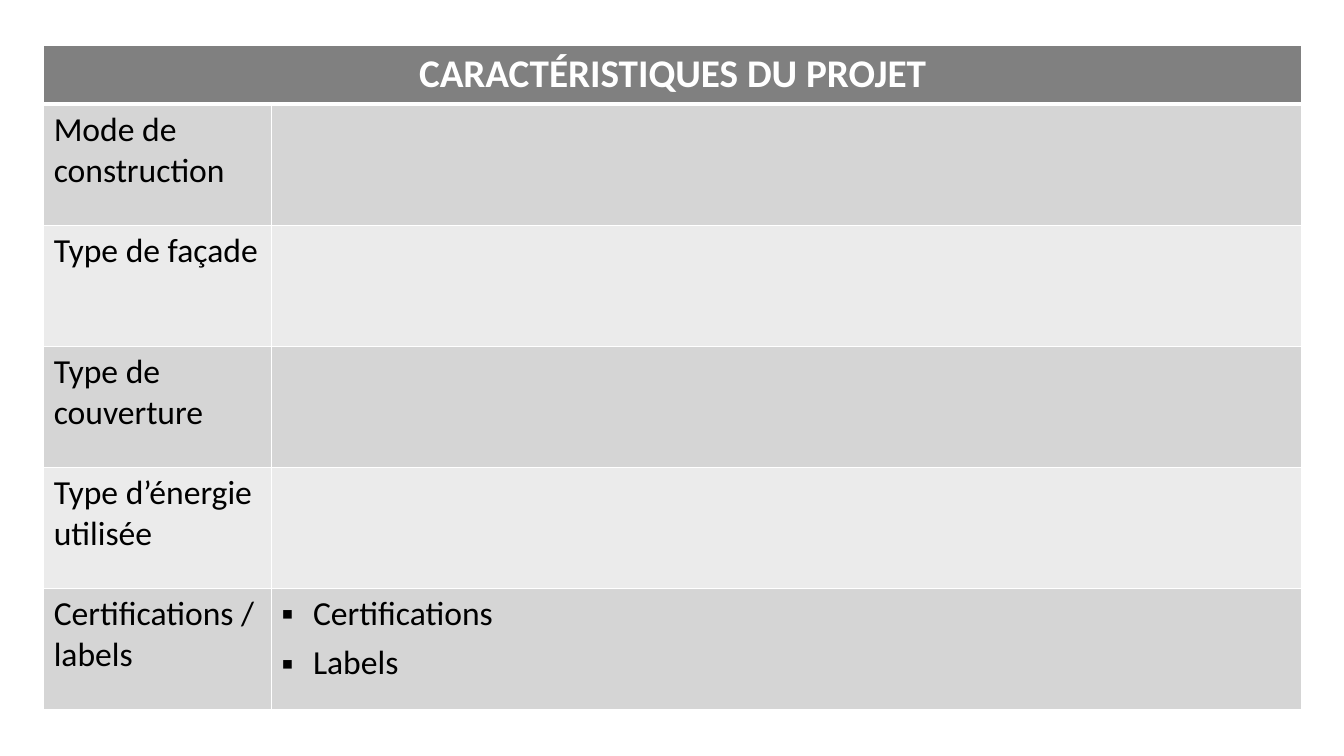
import pptx
import pptx.dml.color
import pptx.enum.text
import pptx.oxml.ns
import pptx.util
from lxml import etree

Pt = pptx.util.Pt
RGBColor = pptx.dml.color.RGBColor
qn = pptx.oxml.ns.qn

WHITE = RGBColor(0xFF, 0xFF, 0xFF)
BLACK = RGBColor(0x00, 0x00, 0x00)
HEADER_GREY = RGBColor(0x80, 0x80, 0x80)
BANDS = (RGBColor(0xD5, 0xD5, 0xD5), RGBColor(0xEB, 0xEB, 0xEB))
FONT = "Calibri"

HEADING = "CARACTÉRISTIQUES DU PROJET"
FEATURES = [
    ("Mode de construction", []),
    ("Type de façade", []),
    ("Type de couverture", []),
    ("Type d’énergie utilisée", []),
    ("Certifications / labels", ["Certifications", "Labels"]),
]
LABEL_WIDTH = 162.7
HEADER_HEIGHT = 41.8


def style_cell(cell, fill, top=1, bottom=1):
    """Give a cell white borders, then its fill."""
    tcPr = cell._tc.get_or_add_tcPr()
    for side, width in (("L", 1), ("R", 1), ("T", top), ("B", bottom)):
        ln = etree.SubElement(tcPr, qn(f"a:ln{side}"), w=str(Pt(width)))
        solid = etree.SubElement(ln, qn("a:solidFill"))
        etree.SubElement(solid, qn("a:srgbClr"), val=str(WHITE))
    cell.fill.solid()
    cell.fill.fore_color.rgb = fill


def add_run(p, text, size, color, bold=False):
    r = p.add_run()
    r.text = text
    r.font.name = FONT
    r.font.size = Pt(size)
    r.font.bold = bold
    r.font.color.rgb = color


def add_bullets(tf, items):
    for i, item in enumerate(items):
        p = tf.add_paragraph() if i else tf.paragraphs[0]
        p.space_after = Pt(6)
        pPr = p._p.get_or_add_pPr()
        pPr.set("marL", str(Pt(22.5)))
        pPr.set("indent", str(-Pt(22.5)))
        etree.SubElement(pPr, qn("a:buFont"), typeface=FONT)
        etree.SubElement(pPr, qn("a:buChar"), char="▪")
        add_run(p, item, 24, BLACK)


def add_features_table(slide, left, top, width, height):
    table = slide.shapes.add_table(
        len(FEATURES) + 1, 2, Pt(left), Pt(top), Pt(width), Pt(height)).table
    table.columns[0].width = Pt(LABEL_WIDTH)
    table.columns[1].width = Pt(width - LABEL_WIDTH)
    table.rows[0].height = Pt(HEADER_HEIGHT)

    # Heading across both columns
    for col in range(2):
        style_cell(table.cell(0, col), HEADER_GREY, bottom=3)
    table.cell(0, 0).merge(table.cell(0, 1))
    p = table.cell(0, 0).text_frame.paragraphs[0]
    p.alignment = pptx.enum.text.PP_ALIGN.CENTER
    add_run(p, HEADING, 28, WHITE, bold=True)

    # One banded row per feature
    for row, (label, items) in enumerate(FEATURES, start=1):
        table.rows[row].height = Pt((height - HEADER_HEIGHT) / len(FEATURES))
        for col in range(2):
            style_cell(table.cell(row, col), BANDS[(row - 1) % 2],
                       top=3 if row == 1 else 1)
        add_run(table.cell(row, 0).text_frame.paragraphs[0], label, 24, BLACK)
        add_bullets(table.cell(row, 1).text_frame, items)


def main():
    prs = pptx.Presentation()
    prs.slide_width = Pt(960)
    prs.slide_height = Pt(540)
    slide = prs.slides.add_slide(prs.slide_layouts[6])
    add_features_table(slide, 31.2, 32.6, 898.5, 474.5)
    prs.save("out.pptx")


if __name__ == "__main__":
    main()
